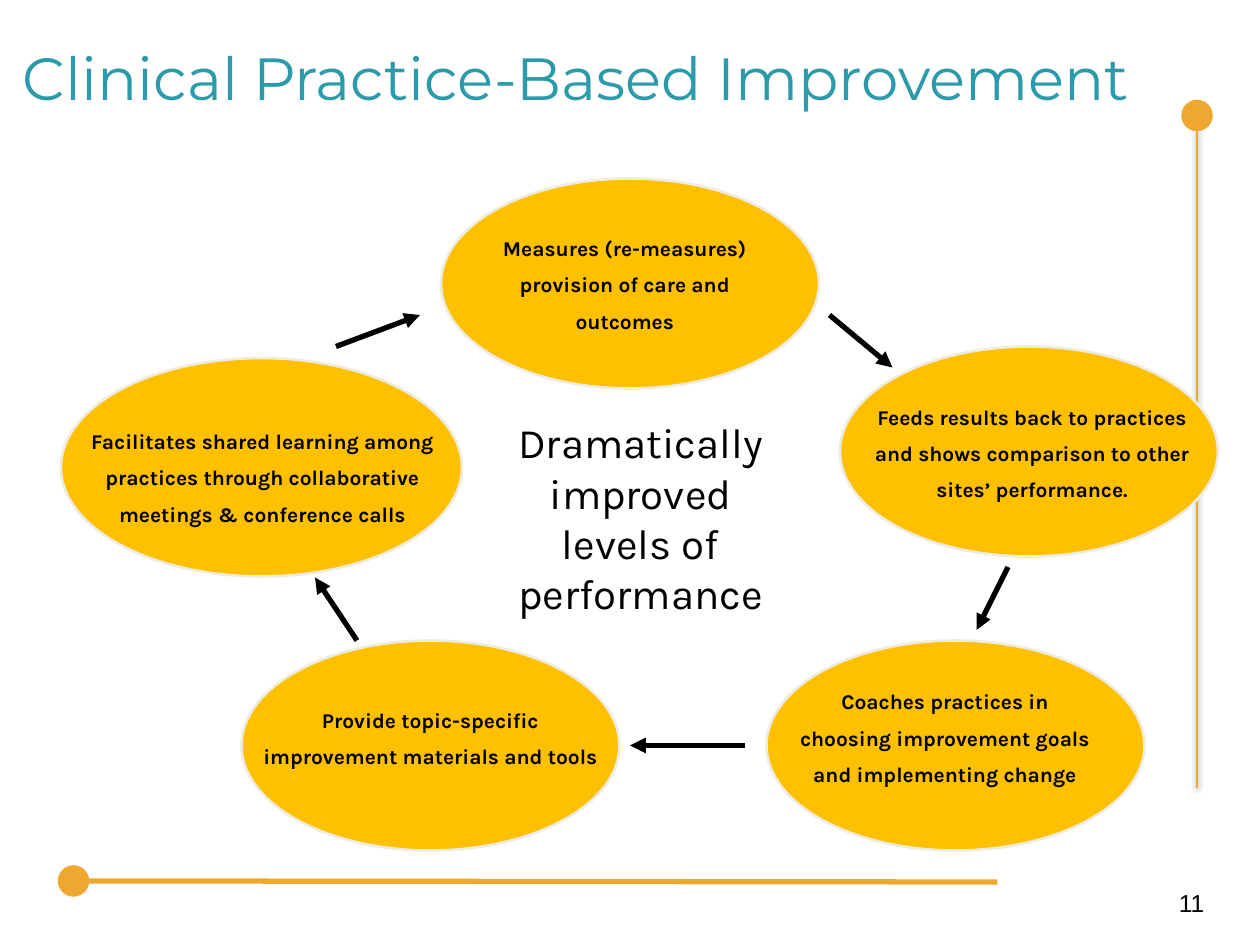
from lxml import etree
from pptx import Presentation
from pptx.dml.color import RGBColor
from pptx.enum.shapes import MSO_CONNECTOR, MSO_SHAPE
from pptx.enum.text import MSO_ANCHOR, PP_ALIGN
from pptx.oxml.ns import qn
from pptx.util import Inches, Pt

STRAIGHT = MSO_CONNECTOR.STRAIGHT
OVAL = MSO_SHAPE.OVAL
LEFT, CENTER = PP_ALIGN.LEFT, PP_ALIGN.CENTER
TOP, MIDDLE = MSO_ANCHOR.TOP, MSO_ANCHOR.MIDDLE
COLUMNS, ROWS = 120, 90
COLORS = {
    "title": "2B9AAA",
    "rule": "EEA82F",
    "oval": "FFC000",
    "outline": "EEECE1",
    "ink": "000000",
}
STEPS = [
    ((42, 17, 36, 20), (43, 21.84, 33, 10.8),
     ["Measures (re-measures)", "provision of care and", "outcomes"]),
    ((80, 33, 36, 20), (79.3, 37.9, 38, 10.8),
     ["Feeds results back to practices", "and shows comparison to other",
      "sites’ performance."]),
    ((73, 61, 36, 20), (71, 65, 38, 10.8),
     ["Coaches practices in", "choosing improvement goals",
      "and implementing change"]),
    ((23, 61, 36, 20), (22, 66.8, 38, 7.2),
     ["Provide topic-specific", "improvement materials and tools"]),
    ((5.8, 34.1, 38.2, 20.8), (6, 40.2, 38, 10.8),
     ["Facilitates shared learning among", "practices through collaborative",
      "meetings & conference calls"]),
]
ARROWS = [
    (79, 30, 85, 35),
    (96, 54, 93, 60),
    (71, 71, 60, 71),
    (34, 61, 30, 55),
    (32, 33, 40, 30),
]


def grid(box):
    """Turn grid columns and rows into slide lengths."""
    return [Inches(value * size) for value, size
            in zip(box, (10 / COLUMNS, 7.5 / ROWS) * 2)]


def color(name):
    """Return a named colour."""
    return RGBColor.from_string(COLORS[name])


def add_text(slide, box, lines, font, size, ink="ink", bold=False,
             align=CENTER, anchor=TOP):
    """Place a text box with one paragraph per line."""
    frame = slide.shapes.add_textbox(*grid(box)).text_frame
    frame.word_wrap = True
    frame.vertical_anchor = anchor
    for index, line in enumerate(lines):
        paragraph = frame.add_paragraph() if index else frame.paragraphs[0]
        paragraph.text = line
        paragraph.alignment = align
        paragraph.space_before = Pt(6.4 if index else 0)
        paragraph.font.name = font
        paragraph.font.size = Pt(size)
        paragraph.font.bold = bold
        paragraph.font.color.rgb = color(ink)
    return frame


def add_oval(slide, box, fill, outline=None):
    """Place a flat oval, outlined when a line colour is named."""
    oval = slide.shapes.add_shape(OVAL, *grid(box))
    oval.shadow.inherit = False
    oval.fill.solid()
    oval.fill.fore_color.rgb = color(fill)
    if outline:
        oval.line.color.rgb = color(outline)
        oval.line.width = Pt(1.5)
    else:
        oval.line.fill.background()


def add_line(slide, ends, name, width, arrow=False):
    """Draw a straight line and return its empty effect list."""
    line = slide.shapes.add_connector(STRAIGHT, *grid(ends))
    line.line.color.rgb = color(name)
    line.line.width = Pt(width)
    if arrow:
        etree.SubElement(line.line._get_or_add_ln(), qn("a:tailEnd"),
                         type="triangle")
    return etree.SubElement(line._element.spPr, qn("a:effectLst"))


def add_frame_rules(slide):
    """Draw the dotted-end rules at the right and bottom edges."""
    effects = add_line(slide, (114, 75, 114, 12.1), "rule", 1.5)
    shadow = etree.SubElement(effects, qn("a:outerShdw"), blurRad=str(Pt(3.1)),
                              dist=str(Pt(1.6)), dir="5400000", rotWithShape="0")
    tint = etree.SubElement(shadow, qn("a:srgbClr"), val=COLORS["ink"])
    etree.SubElement(tint, qn("a:alpha"), val="38000")
    add_oval(slide, (112.5, 9.5, 3, 3), "rule")
    add_line(slide, (8, 83.9, 95, 84), "rule", 3)
    add_oval(slide, (5.5, 82.4, 3, 3), "rule")


def add_title(slide, box):
    """Place the heading slightly below the middle of its box."""
    frame = add_text(slide, box, ["Clinical Practice-Based Improvement"],
                     "Montserrat", 34, "title", align=LEFT, anchor=MIDDLE)
    frame.margin_top = Inches(0.21)


def add_cycle(slide):
    """Draw the improvement steps, their arrows and the central outcome."""
    for oval, label, lines in STEPS:
        add_oval(slide, oval, "oval", "outline")
        add_text(slide, label, lines, "Karla", 12, bold=True)
    for ends in ARROWS:
        add_line(slide, ends, "ink", 3, arrow=True)
    add_text(slide, (48, 39.1, 26, 20.4),
             ["Dramatically improved levels of performance"], "Karla", 24)


def main():
    """Build and save the slide."""
    presentation = Presentation()
    presentation.slide_width, presentation.slide_height = Inches(10), Inches(7.5)
    slide = presentation.slides.add_slide(presentation.slide_layouts[6])
    add_frame_rules(slide)
    add_title(slide, (1, 1.6, 123, 9.4))
    add_text(slide, (111.1, 84, 8.9, 4.2), ["11"], "Arial", 14, align=LEFT)
    add_cycle(slide)
    presentation.save("out.pptx")


if __name__ == "__main__":
    main()
